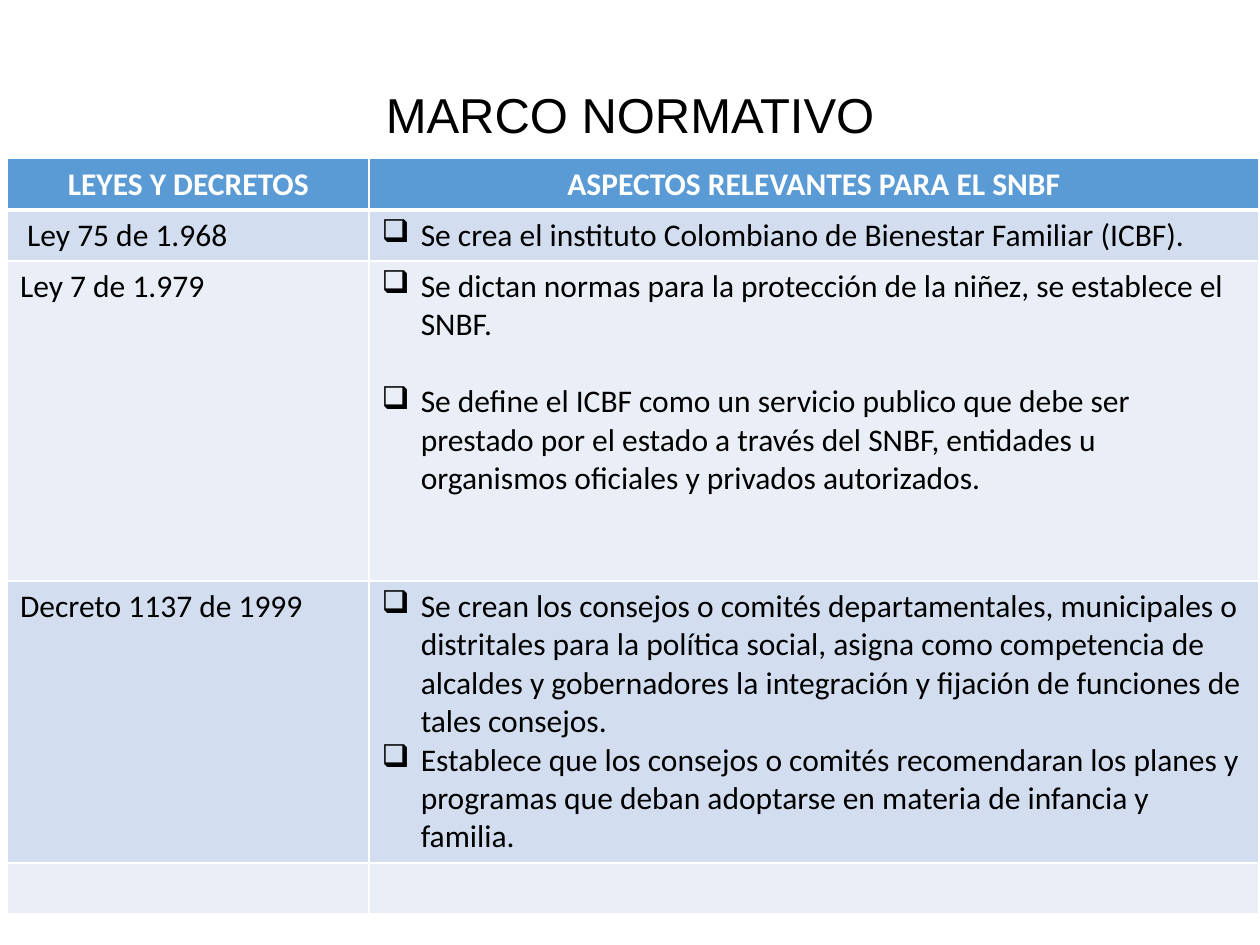
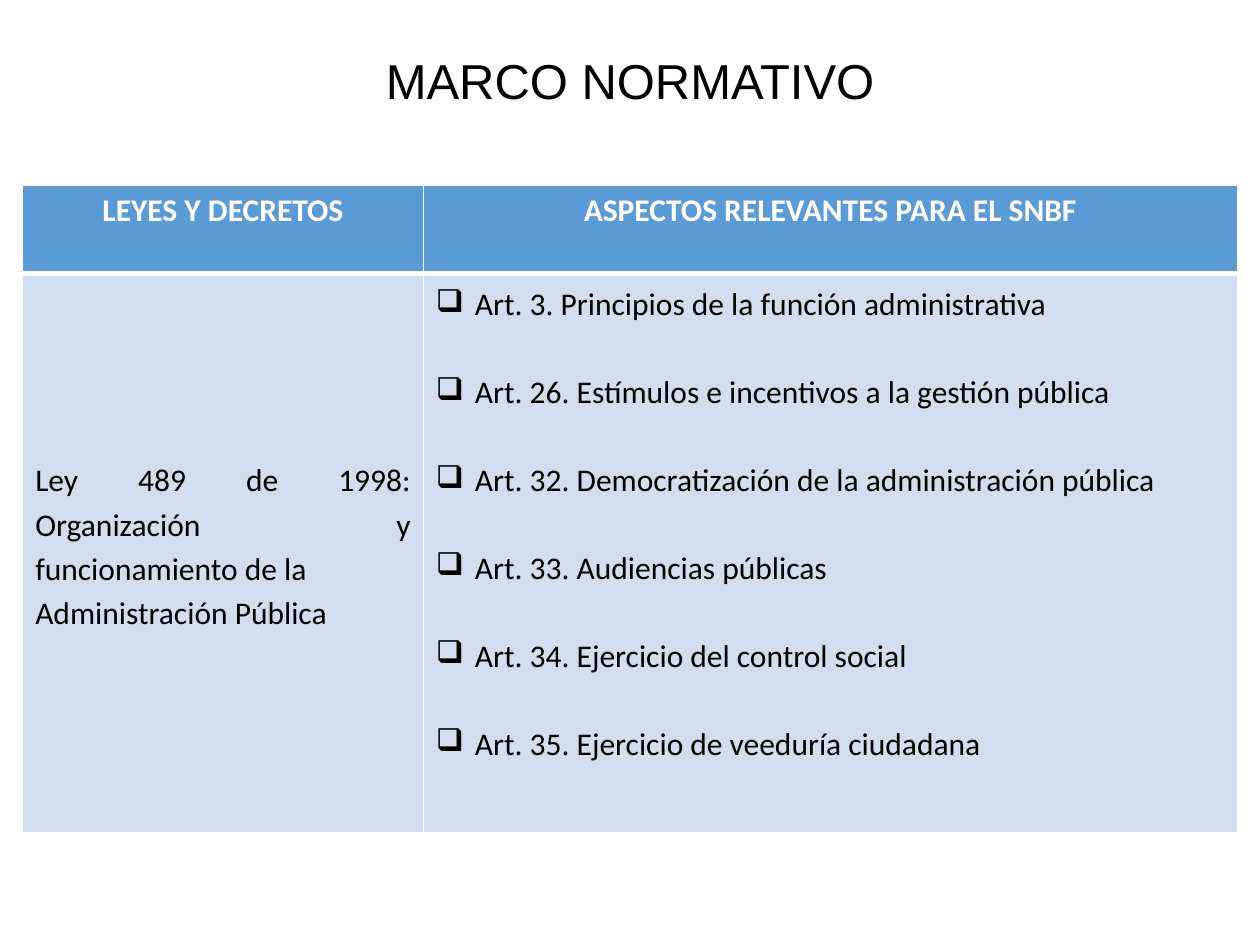
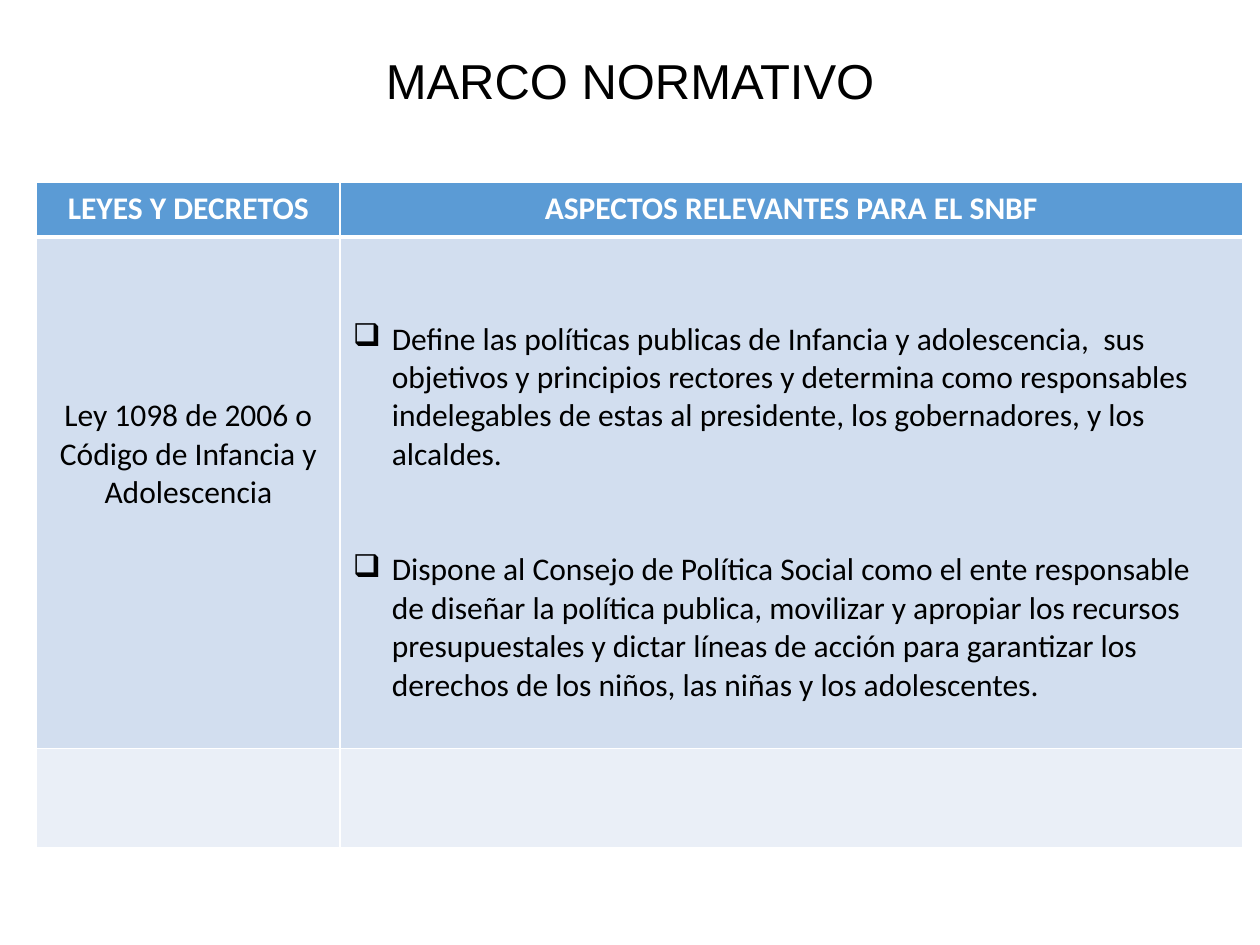
import pptx
import pptx.dml.color
import pptx.enum.text
import pptx.oxml
import pptx.oxml.ns
import pptx.util
from pptx.util import Inches

COLORS = {
    "text": "000000",
    "white": "FFFFFF",
    "header": "5B9BD5",
    "band_dark": "D2DEEF",
    "band_light": "EAEFF7",
}
TITLE = "MARCO NORMATIVO"
HEADERS = ["LEYES Y DECRETOS", "ASPECTOS RELEVANTES PARA EL SNBF"]
ALIGN = pptx.enum.text.PP_ALIGN


def rgb(name):
    return pptx.dml.color.RGBColor.from_string(COLORS[name])


class Deck:
    """Holds the shared style and the slide being built."""

    title_font, body_font = "Arial", "Calibri"
    title_size, body_size = pptx.util.Pt(28), pptx.util.Pt(18)
    hanging = Inches(0.31)

    def __init__(self):
        self.presentation = pptx.Presentation()
        self.presentation.slide_width = Inches(10)
        self.presentation.slide_height = Inches(7.5)
        self.slide = None

    def style(self, paragraph, font_name, size, color, bold=False):
        font = paragraph.font
        font.name, font.size, font.bold = font_name, size, bold
        font.color.rgb = rgb(color)

    def add_slide(self, title_top, title_height):
        layout = self.presentation.slide_layouts[5]
        self.slide = self.presentation.slides.add_slide(layout)
        title = self.slide.shapes.title
        title.left, title.top = Inches(0.69), Inches(title_top)
        title.width, title.height = Inches(8.62), Inches(title_height)
        frame = title.text_frame
        frame.text = TITLE
        frame.auto_size = pptx.enum.text.MSO_AUTO_SIZE.NONE
        frame.vertical_anchor = pptx.enum.text.MSO_ANCHOR.TOP
        paragraph = frame.paragraphs[0]
        paragraph.alignment = ALIGN.CENTER
        paragraph.line_spacing = 0.9
        self.style(paragraph, self.title_font, self.title_size, "text")

    def add_table(self, left, top, widths, heights):
        """Add a banded table with its header row filled in."""
        table = self.slide.shapes.add_table(
            len(heights), len(widths), Inches(left), Inches(top),
            Inches(sum(widths)), Inches(sum(heights))).table
        table.horz_banding = False
        for column, width in zip(table.columns, widths):
            column.width = Inches(width)
        for index, height in enumerate(heights):
            table.rows[index].height = Inches(height)
            fill = "header" if index == 0 else "band_dark" if index % 2 else "band_light"
            for cell in table.rows[index].cells:
                self.set_borders(cell, index)
                cell.fill.solid()
                cell.fill.fore_color.rgb = rgb(fill)
        for cell, text in zip(table.rows[0].cells, HEADERS):
            self.fill_cell(cell, [text], align=ALIGN.CENTER, color="white", bold=True)
        return table

    def set_borders(self, cell, row_index):
        """White lines, thicker between the header and the body."""
        widths = {"L": 1, "R": 1, "T": 3 if row_index == 1 else 1,
                  "B": 3 if row_index == 0 else 1}
        properties = cell._tc.get_or_add_tcPr()
        for side, width in widths.items():
            properties.append(pptx.oxml.parse_xml(
                f'<a:ln{side} {pptx.oxml.ns.nsdecls("a")} w="{pptx.util.Pt(width)}">'
                f'<a:solidFill><a:srgbClr val="{COLORS["white"]}"/></a:solidFill>'
                f'</a:ln{side}>'))

    def fill_cell(self, cell, texts, align=ALIGN.LEFT, color="text", bold=False,
                  bullets=False, gap=0, line_spacing=None, top_margin=0.05):
        """Put one paragraph per text in the cell, gap points apart."""
        cell.margin_top = Inches(top_margin)
        frame = cell.text_frame
        for index, text in enumerate(texts):
            paragraph = frame.add_paragraph() if index else frame.paragraphs[0]
            paragraph.text = text
            paragraph.alignment = align
            if line_spacing:
                paragraph.line_spacing = line_spacing
            if index and gap:
                paragraph.space_before = pptx.util.Pt(gap)
            if bullets:
                self.add_bullet(paragraph)
            self.style(paragraph, self.body_font, self.body_size, color, bold)

    def add_bullet(self, paragraph):
        properties = paragraph._p.get_or_add_pPr()
        properties.set("marL", str(self.hanging))
        properties.set("indent", str(-self.hanging))
        properties.append(pptx.oxml.parse_xml(
            f'<a:buChar {pptx.oxml.ns.nsdecls("a")} char="❑"/>'))


def build_first_laws(deck):
    deck.add_slide(0.67, 1.18)
    table = deck.add_table(0.06, 1.26, [2.87, 7.06], [0.4, 0.4, 2.54, 2.24, 0.4])
    laws = [
        (" Ley 75 de 1.968", 0, [
            "Se crea el instituto Colombiano de Bienestar Familiar (ICBF).",
        ]),
        ("Ley 7 de 1.979", 22, [
            "Se dictan normas para la protección de la niñez, se establece el SNBF.",
            "Se define el ICBF como un servicio publico que debe ser prestado por el "
            "estado a través del SNBF, entidades u organismos oficiales y privados "
            "autorizados.",
        ]),
        ("Decreto 1137 de 1999", 0, [
            "Se crean los consejos o comités departamentales, municipales o  "
            "distritales para la política social, asigna como competencia de alcaldes "
            "y gobernadores la integración y fijación de funciones de tales consejos.",
            "Establece que los consejos o comités recomendaran los planes y programas "
            "que deban adoptarse en materia de infancia y familia.",
        ]),
    ]
    for row, (law, gap, aspects) in enumerate(laws, start=1):
        deck.fill_cell(table.cell(row, 0), [law])
        deck.fill_cell(table.cell(row, 1), aspects, bullets=True, gap=gap)


def build_public_administration(deck):
    deck.add_slide(0.4, 1.45)
    table = deck.add_table(0.18, 1.47, [3.18, 6.46], [0.7, 4.44])
    deck.fill_cell(table.cell(1, 0),
                   ["Ley 489 de 1998: Organización y funcionamiento de la",
                    "Administración Pública"],
                   align=ALIGN.JUSTIFY, line_spacing=1.15, top_margin=1.45)
    articles = [
        "Art. 3. Principios de la función administrativa",
        "Art. 26. Estímulos e incentivos a la gestión pública",
        "Art. 32. Democratización de la administración pública",
        "Art. 33. Audiencias públicas",
        "Art. 34. Ejercicio del control social",
        "Art. 35. Ejercicio de veeduría ciudadana",
    ]
    deck.fill_cell(table.cell(1, 1), articles, align=ALIGN.JUSTIFY, bullets=True,
                   gap=25, line_spacing=1.15)


def build_childhood_code(deck):
    deck.add_slide(0.4, 1.45)
    table = deck.add_table(0.29, 1.45, [2.41, 7.16], [0.43, 4.06, 0.79])
    deck.fill_cell(table.cell(1, 0),
                   ["Ley 1098 de 2006 o Código de Infancia y Adolescencia"],
                   align=ALIGN.CENTER, top_margin=1.27)
    aspects = [
        "Define las políticas publicas de Infancia y adolescencia,  sus objetivos y "
        "principios rectores y determina como responsables indelegables de estas al "
        "presidente, los gobernadores, y los alcaldes.",
        "Dispone al Consejo de Política Social como el ente responsable de diseñar la "
        "política publica, movilizar y apropiar los recursos presupuestales y dictar "
        "líneas de acción para garantizar los derechos de los niños, las niñas y los "
        "adolescentes.",
    ]
    deck.fill_cell(table.cell(1, 1), aspects, bullets=True, gap=44, top_margin=0.66)


def main():
    deck = Deck()
    build_first_laws(deck)
    build_public_administration(deck)
    build_childhood_code(deck)
    deck.presentation.save("out.pptx")


if __name__ == "__main__":
    main()
